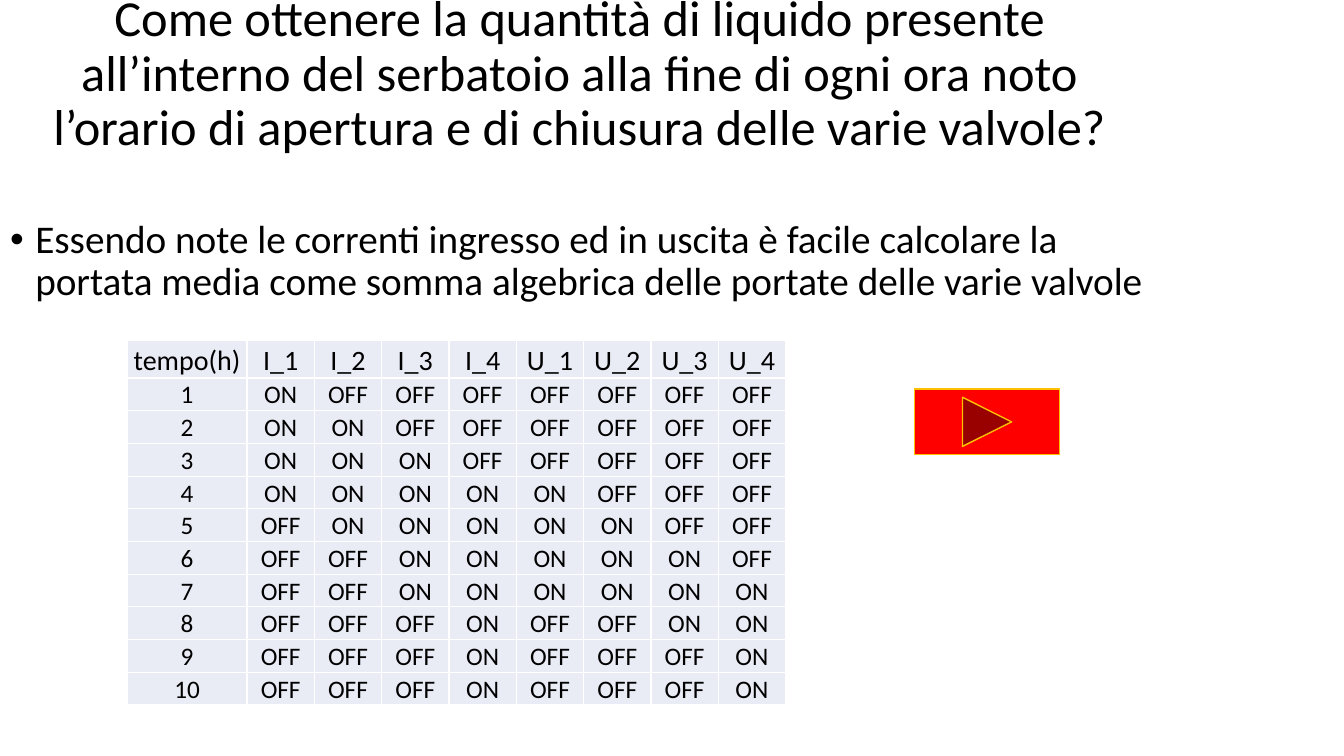
"""Build the slide on the tank's liquid level and its valve timetable."""
from lxml.etree import SubElement
from pptx import Presentation
from pptx.dml.color import RGBColor
from pptx.enum.shapes import MSO_SHAPE as Preset
from pptx.enum.text import MSO_ANCHOR as Anchor, MSO_AUTO_SIZE as AutoSize, PP_ALIGN as Align
from pptx.oxml import parse_xml
from pptx.oxml.ns import nsdecls, qn
from pptx.util import Inches, Pt

WIDTH, HEIGHT = Inches(13.33), Inches(7.5)
TEXT_WIDTH = 86.27
QUESTION = ("Come ottenere la quantità di liquido presente all’interno del serbatoio "
            "alla fine di ogni ora noto l’orario di apertura e di chiusura delle varie valvole?")
ANSWER = ("Essendo note le correnti ingresso ed in uscita è facile calcolare la portata "
          "media come somma algebrica delle portate delle varie valvole")
HOURS = range(1, 11)
OPEN_HOURS = {
    "I_1": (1, 4), "I_2": (2, 5), "I_3": (3, 7), "I_4": (4, 10),
    "U_1": (4, 7), "U_2": (5, 7), "U_3": (6, 8), "U_4": (7, 10),
}
HOUR_COLUMN, VALVE_COLUMN = 8.93, 5.01
HEADING_ROW, HOUR_ROW = 4.93, 4.33


def across(percent):
    """Return a share of the slide's width."""
    return round(WIDTH * percent / 100)


def down(percent):
    """Return a share of the slide's height."""
    return round(HEIGHT * percent / 100)


def area(left, top, width, height):
    """Return a position and size given in percent of the slide."""
    return across(left), down(top), across(width), down(height)


def paint(colour_format, colour):
    """Apply a hex colour to a font or a solid fill."""
    colour_format.rgb = RGBColor.from_string(colour)


def style_text(paragraph, size, align):
    """Align a paragraph and format its runs."""
    paragraph.alignment = align
    for run in paragraph.runs:
        run.font.name = "Calibri"
        run.font.size = Pt(size)
        paint(run.font.color, "000000")


def fill_placeholder(holder, place, text, size, align, anchor):
    """Move a placeholder and give it one formatted paragraph."""
    holder.left, holder.top, holder.width, holder.height = place
    frame = holder.text_frame
    frame.text = text
    frame.word_wrap = True
    frame.auto_size = AutoSize.NONE
    frame.vertical_anchor = anchor
    paragraph = frame.paragraphs[0]
    paragraph.line_spacing = 0.9
    paragraph.space_before = Pt(0)
    style_text(paragraph, size, align)
    return paragraph


def add_bullet(paragraph):
    """Give a paragraph a round bullet with a hanging indent."""
    properties = paragraph._p.get_or_add_pPr()
    properties.set("marL", str(Inches(0.25)))
    properties.set("indent", str(-Inches(0.25)))
    SubElement(properties, qn("a:buFont")).set("typeface", "Arial")
    SubElement(properties, qn("a:buChar")).set("char", "•")


def style_cell(cell, text, size):
    """Write a cell and set its fill, margins and white borders."""
    cell.text = text
    cell.vertical_anchor = Anchor.BOTTOM
    cell.margin_left = cell.margin_right = cell.margin_top = Inches(0.01)
    cell.margin_bottom = 0
    cell.fill.solid()
    paint(cell.fill.fore_color, "E9EBF5")
    style_text(cell.text_frame.paragraphs[0], size, Align.CENTER)
    for position, side in enumerate("LRTB"):
        border = parse_xml(
            f'<a:ln{side} {nsdecls("a")} w="{Pt(1)}"><a:solidFill>'
            f'<a:srgbClr val="FFFFFF"/></a:solidFill></a:ln{side}>')
        cell._tc.get_or_add_tcPr().insert(position, border)


def add_timetable(slide):
    """Add the table of valve states for every hour."""
    lines = [["tempo(h)", *OPEN_HOURS]]
    for hour in HOURS:
        states = ["ON" if first <= hour <= last else "OFF"
                  for first, last in OPEN_HOURS.values()]
        lines.append([str(hour), *states])
    place = area(9.45, 45.07, HOUR_COLUMN + len(OPEN_HOURS) * VALVE_COLUMN,
                 HEADING_ROW + len(HOURS) * HOUR_ROW)
    timetable = slide.shapes.add_table(len(lines), len(lines[0]), *place).table
    timetable.first_row = timetable.horz_banding = False
    for index, column in enumerate(timetable.columns):
        column.width = across(VALVE_COLUMN if index else HOUR_COLUMN)
    for index, (row, line) in enumerate(zip(timetable.rows, lines)):
        row.height = down(HOUR_ROW if index else HEADING_ROW)
        for cell, text in zip(row.cells, line):
            style_cell(cell, text, 18 if index else 20)


def add_next_button(slide):
    """Add the red button that leads forward."""
    button = slide.shapes.add_shape(
        Preset.ACTION_BUTTON_FORWARD_OR_NEXT, *area(68.04, 51.47, 10.8, 8.67))
    button.shadow.inherit = False
    button.fill.solid()
    paint(button.fill.fore_color, "FF0000")
    paint(button.line.color, "FFC000")
    button.line.width = Pt(1)


def main():
    """Build and save the presentation."""
    deck = Presentation()
    deck.slide_width, deck.slide_height = WIDTH, HEIGHT
    slide = deck.slides.add_slide(deck.slide_layouts[1])
    fill_placeholder(slide.shapes.title, area(0, 5.33, TEXT_WIDTH, 9.2),
                     QUESTION, 36, Align.CENTER, Anchor.MIDDLE)
    answer = fill_placeholder(slide.placeholders[1], area(0, 28.4, TEXT_WIDTH, 63.47),
                              ANSWER, 28, Align.LEFT, Anchor.TOP)
    add_bullet(answer)
    add_timetable(slide)
    add_next_button(slide)
    deck.save("out.pptx")


if __name__ == "__main__":
    main()
